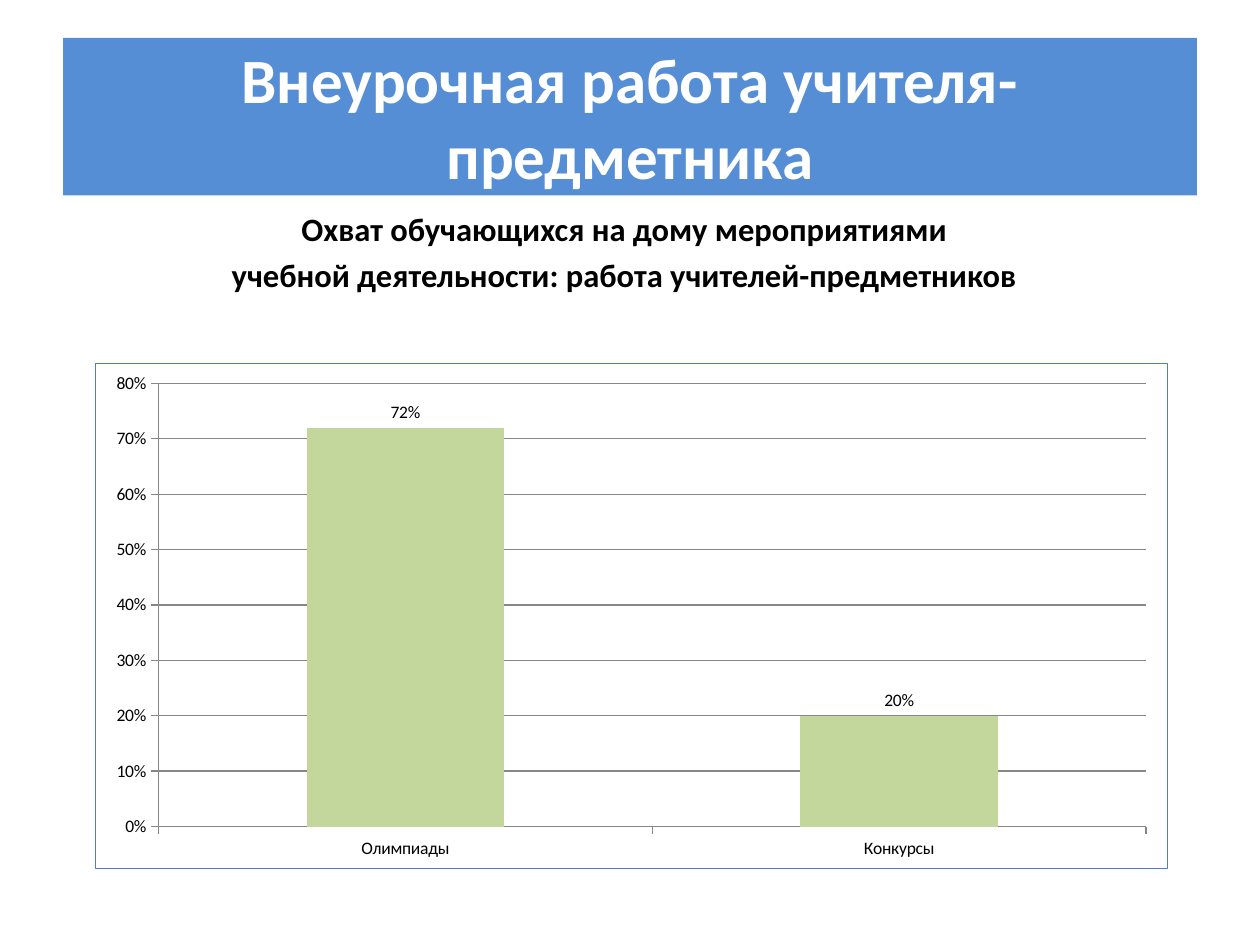
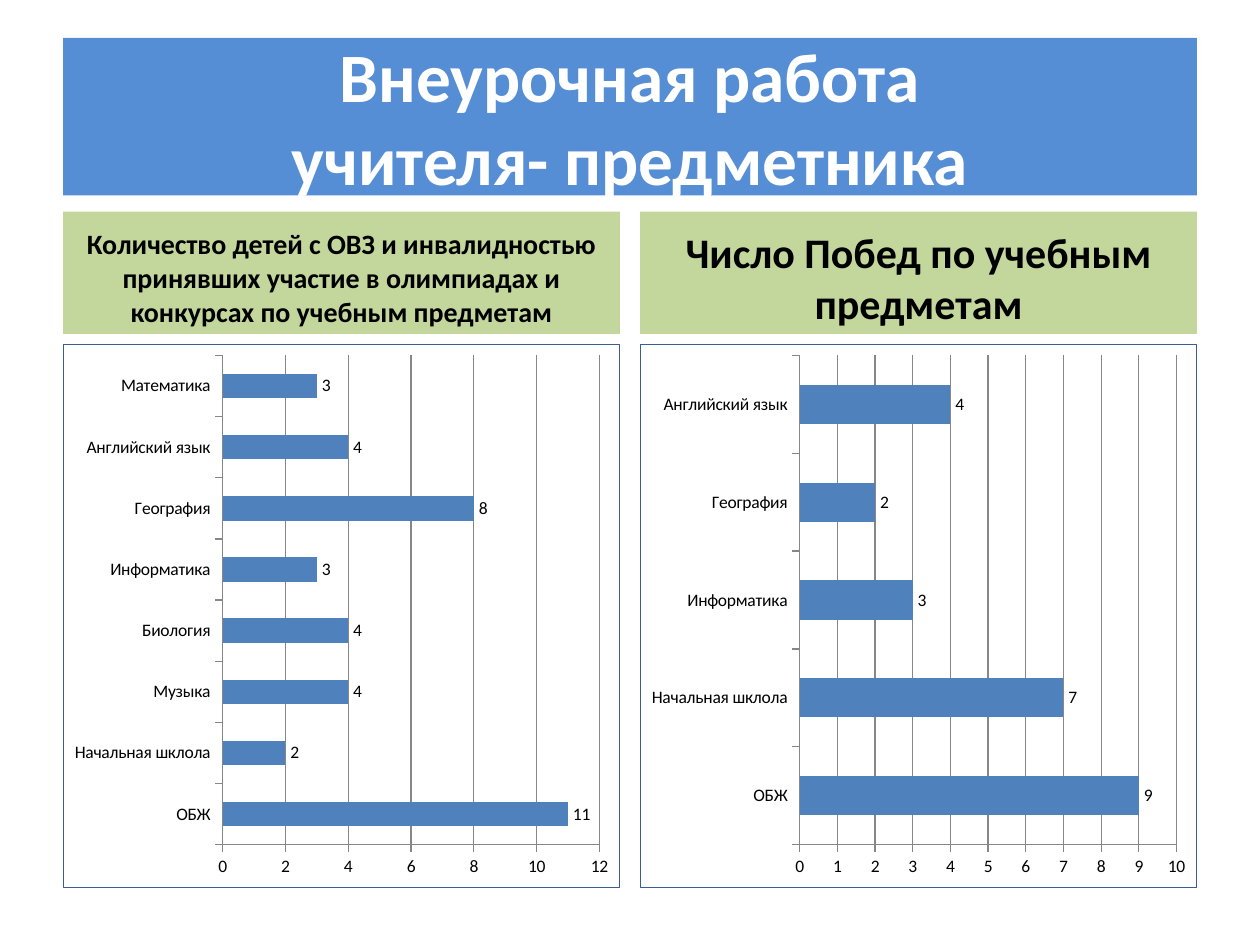
from lxml import etree
from pptx import Presentation
from pptx.chart.data import CategoryChartData
from pptx.dml.color import RGBColor
from pptx.enum.chart import XL_CHART_TYPE, XL_LABEL_POSITION, XL_TICK_MARK
from pptx.enum.shapes import MSO_SHAPE
from pptx.enum.text import MSO_ANCHOR, MSO_AUTO_SIZE, PP_ALIGN
from pptx.oxml import parse_xml
from pptx.oxml.ns import nsdecls, qn
from pptx.util import Inches, Pt

COLUMN, BAR = XL_CHART_TYPE.COLUMN_CLUSTERED, XL_CHART_TYPE.BAR_CLUSTERED
OUTSIDE_END, TICK_OUT = XL_LABEL_POSITION.OUTSIDE_END, XL_TICK_MARK.OUTSIDE
RECTANGLE = MSO_SHAPE.RECTANGLE
MIDDLE, BOTTOM = MSO_ANCHOR.MIDDLE, MSO_ANCHOR.BOTTOM
CENTER, NO_FIT = PP_ALIGN.CENTER, MSO_AUTO_SIZE.NONE

COLORS = {
    "white": "FFFFFF", "black": "000000", "band": "558ED5", "green": "C3D69B",
    "blue": "4F81BD", "frame": "3A5F8C", "grid": "878787",
}
FONT = "Calibri"
GRID_COLUMNS, GRID_ROWS = 100, 75
MARGIN, GUTTER = 5, 1.6
FULL_WIDTH = GRID_COLUMNS - 2 * MARGIN
HALF_WIDTH = (FULL_WIDTH - GUTTER) / 2
HEADING_TOP, HEADING_ROWS = 16.8, 9.7
TITLE_AREA = (MARGIN, 3, FULL_WIDTH, 12.5)


def color(name):
    """Return the named colour of the palette."""
    return RGBColor.from_string(COLORS[name])


def assign(target, values):
    """Set each attribute in values on the target."""
    for name, value in values.items():
        setattr(target, name, value)


class SlideBuilder:
    """Hold the shared style and the slide being built."""

    def __init__(self, deck):
        """Start with an empty deck."""
        self.deck = deck
        self.slide = None

    def place(self, area):
        """Turn grid columns and rows into slide lengths."""
        column = self.deck.slide_width / GRID_COLUMNS
        row = self.deck.slide_height / GRID_ROWS
        return [round(length * unit) for length, unit in zip(area, (column, row) * 2)]

    def fill_text(self, box, lines, size, ink, anchor, space=0):
        """Put centred bold lines into a box."""
        frame = box.text_frame
        frame.text = "\n".join(lines)
        assign(frame, {"word_wrap": True, "auto_size": NO_FIT, "vertical_anchor": anchor})
        for para in frame.paragraphs:
            assign(para, {"alignment": CENTER, "space_before": Pt(space)})
            for span in para.runs:
                assign(span.font, {"name": FONT, "size": Pt(size), "bold": True})
                span.font.color.rgb = color(ink)

    def page(self, lines, size):
        """Add a slide with its title band."""
        self.slide = self.deck.slides.add_slide(self.deck.slide_layouts[5])
        title = self.slide.shapes.title
        sides = ("left", "top", "width", "height")
        assign(title, dict(zip(sides, self.place(TITLE_AREA))))
        title.fill.solid()
        title.fill.fore_color.rgb = color("band")
        self.fill_text(title, lines, size, "white", MIDDLE)

    def caption(self, area, lines, size):
        """Add a plain text block."""
        box = self.slide.shapes.add_textbox(*self.place(area))
        self.fill_text(box, lines, size, "black", BOTTOM, size / 5)

    def heading(self, area, text, size):
        """Add a filled column heading."""
        box = self.slide.shapes.add_shape(RECTANGLE, *self.place(area))
        box.shadow.inherit = False
        box.fill.solid()
        box.fill.fore_color.rgb = color("green")
        box.line.fill.background()
        self.fill_text(box, [text], size, "black", BOTTOM, size / 5)

    def chart(self, area, kind, values, top, step, fill, border, number_format="General"):
        """Add a framed single-series chart with value labels."""
        data = CategoryChartData(number_format=number_format)
        data.categories = values.keys()
        data.add_series("Series 1", values.values())
        chart = self.slide.shapes.add_chart(kind, *self.place(area), data).chart
        assign(chart, {"has_legend": False, "has_title": False})
        assign(chart.font, {"name": FONT, "size": Pt(10)})
        chart.font.color.rgb = color("black")
        self.frame(chart, border)

        value_axis = chart.value_axis
        assign(value_axis, {"minimum_scale": 0, "maximum_scale": top,
                            "major_unit": step, "has_major_gridlines": True})
        assign(value_axis.tick_labels,
               {"number_format": number_format, "number_format_is_linked": False})
        for axis in (chart.category_axis, value_axis):
            axis.major_tick_mark = TICK_OUT
        for owner in (chart.category_axis, value_axis, value_axis.major_gridlines):
            owner.format.line.color.rgb = color("grid")
            owner.format.line.width = Pt(0.75)

        plot = chart.plots[0]
        assign(plot, {"gap_width": 150, "vary_by_categories": False,
                      "has_data_labels": True})
        assign(plot.data_labels,
               {"show_value": True, "position": OUTSIDE_END,
                "number_format": number_format, "number_format_is_linked": False})
        series = plot.series[0]
        series.invert_if_negative = False
        series.format.fill.solid()
        series.format.fill.fore_color.rgb = color(fill)

    def frame(self, chart, border):
        """Draw a thin border around the chart area."""
        outline = parse_xml(f"<c:spPr {nsdecls('c', 'a')}/>")
        etree.SubElement(outline, qn("a:noFill"))
        line = etree.SubElement(outline, qn("a:ln"), w=str(Pt(0.75)))
        solid = etree.SubElement(line, qn("a:solidFill"))
        etree.SubElement(solid, qn("a:srgbClr"), val=COLORS[border])
        chart.element.find(qn("c:chart")).addnext(outline)


def main():
    """Build and save the deck."""
    deck = Presentation()
    assign(deck, {"slide_width": Inches(10), "slide_height": Inches(7.5)})
    builder = SlideBuilder(deck)

    builder.page(["Внеурочная работа учителя- предметника"], 36)
    builder.caption((MARGIN, HEADING_TOP, 89.1, 7),
                    ["Охват обучающихся на дому мероприятиями",
                     "учебной деятельности: работа учителей-предметников"], 18.6)
    builder.chart((7.5, 28.8, 85.2, 40.2), COLUMN,
                  {"Олимпиады": 0.72, "Конкурсы": 0.2},
                  0.8, 0.1, "green", "blue", "0%")

    builder.page(["Внеурочная работа", "учителя- предметника"], 39.6)
    participants = {
        "ОБЖ": 11, "Начальная шклола": 2, "Музыка": 4, "Биология": 4,
        "Информатика": 3, "География": 8, "Английский язык": 4, "Математика": 3,
    }
    wins = {
        "ОБЖ": 9, "Начальная шклола": 7, "Информатика": 3,
        "География": 2, "Английский язык": 4,
    }
    halves = [
        ("Количество детей с ОВЗ и инвалидностью принявших участие "
         "в олимпиадах и конкурсах по учебным предметам", 16, participants, 12, 2),
        ("Число Побед по учебным предметам", 24, wins, 10, 1),
    ]
    for index, (text, size, values, top, step) in enumerate(halves):
        left = MARGIN + index * (HALF_WIDTH + GUTTER)
        builder.heading((left, HEADING_TOP, HALF_WIDTH, HEADING_ROWS), text, size)
        builder.chart((left, 27.3, HALF_WIDTH, 43.2), BAR, values,
                      top, step, "blue", "frame")

    deck.save("out.pptx")


if __name__ == "__main__":
    main()
